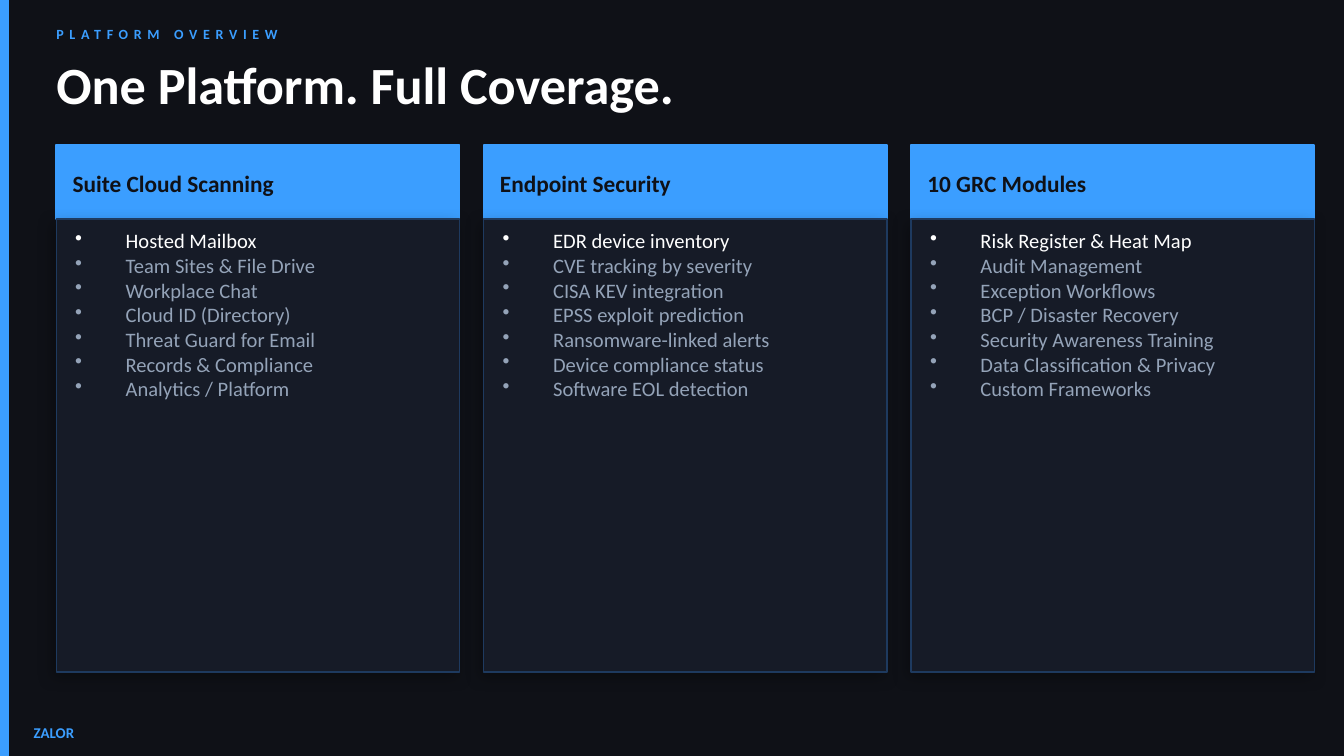
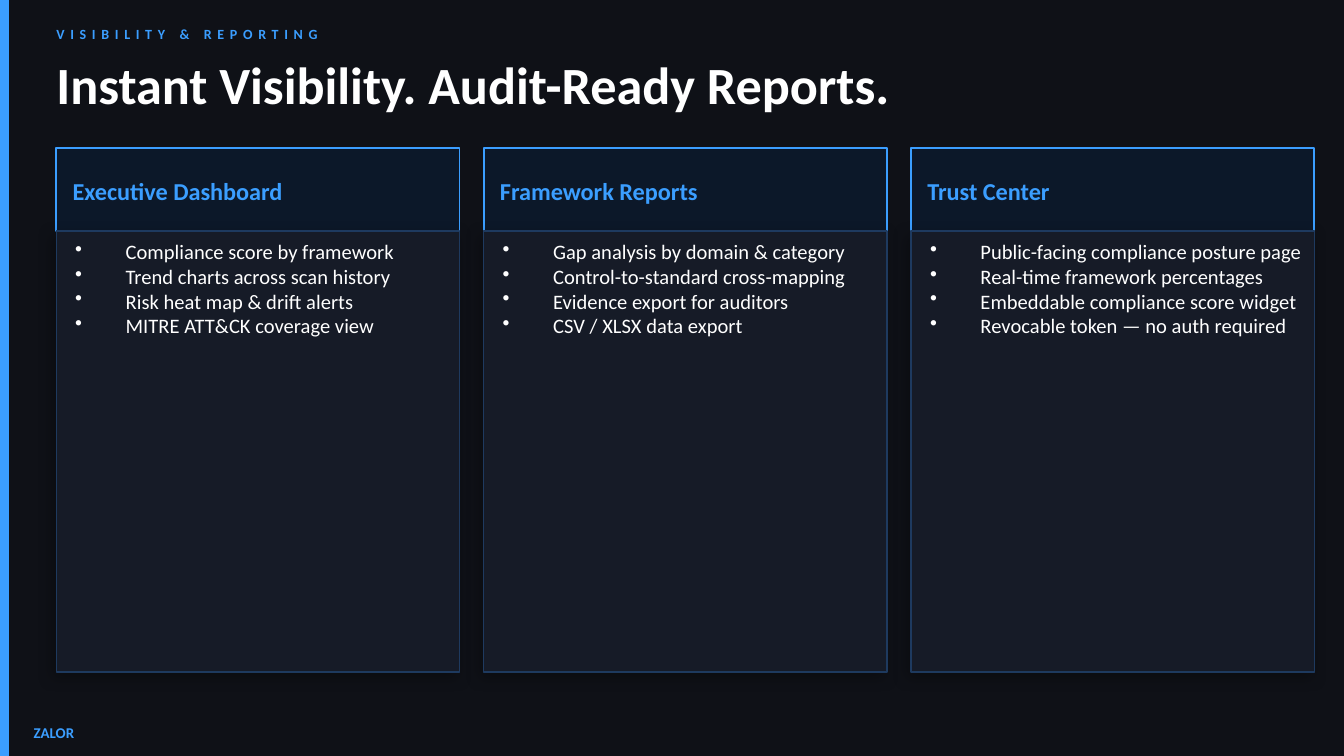
from dataclasses import dataclass

from lxml.etree import SubElement
from pptx import Presentation
from pptx.dml.color import RGBColor
from pptx.enum.shapes import MSO_SHAPE
from pptx.enum.text import MSO_ANCHOR
from pptx.oxml.ns import qn
from pptx.util import Inches, Pt


@dataclass(frozen=True)
class Theme:
    font: str = "Calibri"
    background: str = "0F1117"
    accent: str = "3B9EFF"
    white: str = "FFFFFF"
    muted: str = "94A3B8"
    panel: str = "161B27"
    panel_line: str = "1E3A5F"
    dark_header: str = "0C1829"
    shadow: str = "000000"
    footer_size: float = 8
    eyebrow_size: float = 7.5
    title_size: float = 28
    bullet_size: float = 11
    bullet_indent: float = 27


@dataclass(frozen=True)
class CardStyle:
    top: float
    header_height: float
    heading_top: float
    heading_size: float
    header_fill: str
    heading_color: str
    bullets_top: float
    later_bullet_color: str


SLIDE_WIDTH = 10
SLIDE_HEIGHT = SLIDE_WIDTH * 9 / 16
MARGIN, CARD_WIDTH, CARD_GAP = 0.42, 3, 0.18
CARD_BOTTOM, BULLETS_BOTTOM = 5, 4.9

THEME = Theme()
SOLID_CARDS = CardStyle(1.08, 0.55, 1.14, 12.5, THEME.accent, THEME.background, 1.7, THEME.muted)
OUTLINED_CARDS = CardStyle(1.1, 0.62, 1.2, 13, THEME.dark_header, THEME.accent, 1.78, THEME.white)

SLIDES = [
    ("PLATFORM OVERVIEW", "One Platform. Full Coverage.", SOLID_CARDS, [
        ("Suite Cloud Scanning", [
            "Hosted Mailbox",
            "Team Sites & File Drive",
            "Workplace Chat",
            "Cloud ID (Directory)",
            "Threat Guard for Email",
            "Records & Compliance",
            "Analytics / Platform",
        ]),
        ("Endpoint Security", [
            "EDR device inventory",
            "CVE tracking by severity",
            "CISA KEV integration",
            "EPSS exploit prediction",
            "Ransomware-linked alerts",
            "Device compliance status",
            "Software EOL detection",
        ]),
        ("10 GRC Modules", [
            "Risk Register & Heat Map",
            "Audit Management",
            "Exception Workflows",
            "BCP / Disaster Recovery",
            "Security Awareness Training",
            "Data Classification & Privacy",
            "Custom Frameworks",
        ]),
    ]),
    ("VISIBILITY & REPORTING", "Instant Visibility. Audit-Ready Reports.", OUTLINED_CARDS, [
        ("Executive Dashboard", [
            "Compliance score by framework",
            "Trend charts across scan history",
            "Risk heat map & drift alerts",
            "MITRE ATT&CK coverage view",
        ]),
        ("Framework Reports", [
            "Gap analysis by domain & category",
            "Control-to-standard cross-mapping",
            "Evidence export for auditors",
            "CSV / XLSX data export",
        ]),
        ("Trust Center", [
            "Public-facing compliance posture page",
            "Real-time framework percentages",
            "Embeddable compliance score widget",
            "Revocable token — no auth required",
        ]),
    ]),
]


class DeckBuilder:
    def __init__(self, presentation, theme):
        self.presentation = presentation
        self.theme = theme
        self.slide = None

    def add_slide(self, eyebrow, title):
        theme = self.theme
        self.slide = self.presentation.slides.add_slide(self.presentation.slide_layouts[6])
        background = self.slide.background.fill
        background.solid()
        background.fore_color.rgb = RGBColor.from_string(theme.background)
        self.add_rectangle(0, 0, 0.06, SLIDE_HEIGHT, theme.accent, theme.accent, 1)
        self.add_label("ZALOR", 0.25, 5.34, 1, 0.22, theme.footer_size, theme.accent)
        self.add_label(eyebrow, MARGIN, 0.14, 6, 0.22, theme.eyebrow_size, theme.accent, 3)
        self.add_label(title, MARGIN, 0.32, 9.4, 0.6, theme.title_size, theme.white)

    def add_rectangle(self, left, top, width, height, fill, line, line_width):
        shape = self.slide.shapes.add_shape(
            MSO_SHAPE.RECTANGLE, Inches(left), Inches(top), Inches(width), Inches(height))
        shape.fill.solid()
        shape.fill.fore_color.rgb = RGBColor.from_string(fill)
        shape.line.color.rgb = RGBColor.from_string(line)
        shape.line.width = Pt(line_width)
        shape.shadow.inherit = False
        return shape

    def add_shadow(self, shape):
        effects = shape._element.spPr.find(qn("a:effectLst"))
        shadow = SubElement(effects, qn("a:outerShdw"), blurRad=str(Pt(8)), dist=str(Pt(3)),
                            dir=str(135 * 60000), algn="bl", rotWithShape="0")
        color = SubElement(shadow, qn("a:srgbClr"), val=self.theme.shadow)
        SubElement(color, qn("a:alpha"), val="30000")

    def add_text_frame(self, left, top, width, height, anchor):
        box = self.slide.shapes.add_textbox(
            Inches(left), Inches(top), Inches(width), Inches(height))
        frame = box.text_frame
        frame.word_wrap = True
        frame.vertical_anchor = anchor
        frame.margin_left = frame.margin_top = frame.margin_right = frame.margin_bottom = 0
        return frame

    def add_run(self, paragraph, text, size, color, bold=False):
        run = paragraph.add_run()
        run.text = text
        run.font.name = self.theme.font
        run.font.size = Pt(size)
        run.font.bold = bold
        run.font.color.rgb = RGBColor.from_string(color)
        return run

    def add_label(self, text, left, top, width, height, size, color, spacing=0):
        frame = self.add_text_frame(left, top, width, height, MSO_ANCHOR.MIDDLE)
        run = self.add_run(frame.paragraphs[0], text, size, color, bold=True)
        if spacing:
            run.font._element.set("spc", str(spacing * 100))

    def add_bullets(self, items, left, top, width, height, later_color):
        frame = self.add_text_frame(left, top, width, height, MSO_ANCHOR.TOP)
        indent = Pt(self.theme.bullet_indent)
        for index, item in enumerate(items):
            paragraph = frame.paragraphs[0] if index == 0 else frame.add_paragraph()
            properties = paragraph._p.get_or_add_pPr()
            properties.set("marL", str(indent))
            properties.set("indent", str(-indent))
            SubElement(properties, qn("a:buSzPct"), val="100000")
            SubElement(properties, qn("a:buChar"), char="•")
            color = later_color if index else self.theme.white
            self.add_run(paragraph, item, self.theme.bullet_size, color)

    def add_card(self, left, heading, items, style):
        theme = self.theme
        panel_top = style.top + style.header_height
        self.add_rectangle(left, style.top, CARD_WIDTH, style.header_height,
                           style.header_fill, theme.accent, 1)
        self.add_label(heading, left + 0.12, style.heading_top, CARD_WIDTH - 0.18, 0.44,
                       style.heading_size, style.heading_color)
        panel = self.add_rectangle(left, panel_top, CARD_WIDTH, CARD_BOTTOM - panel_top,
                                   theme.panel, theme.panel_line, 0.75)
        self.add_shadow(panel)
        self.add_bullets(items, left + 0.14, style.bullets_top, CARD_WIDTH - 0.22,
                         BULLETS_BOTTOM - style.bullets_top, style.later_bullet_color)


def main():
    presentation = Presentation()
    presentation.slide_width = Inches(SLIDE_WIDTH)
    presentation.slide_height = Inches(SLIDE_HEIGHT)
    builder = DeckBuilder(presentation, THEME)
    for eyebrow, title, style, cards in SLIDES:
        builder.add_slide(eyebrow, title)
        for column, (heading, items) in enumerate(cards):
            left = MARGIN + column * (CARD_WIDTH + CARD_GAP)
            builder.add_card(left, heading, items, style)
    presentation.save("out.pptx")


if __name__ == "__main__":
    main()
